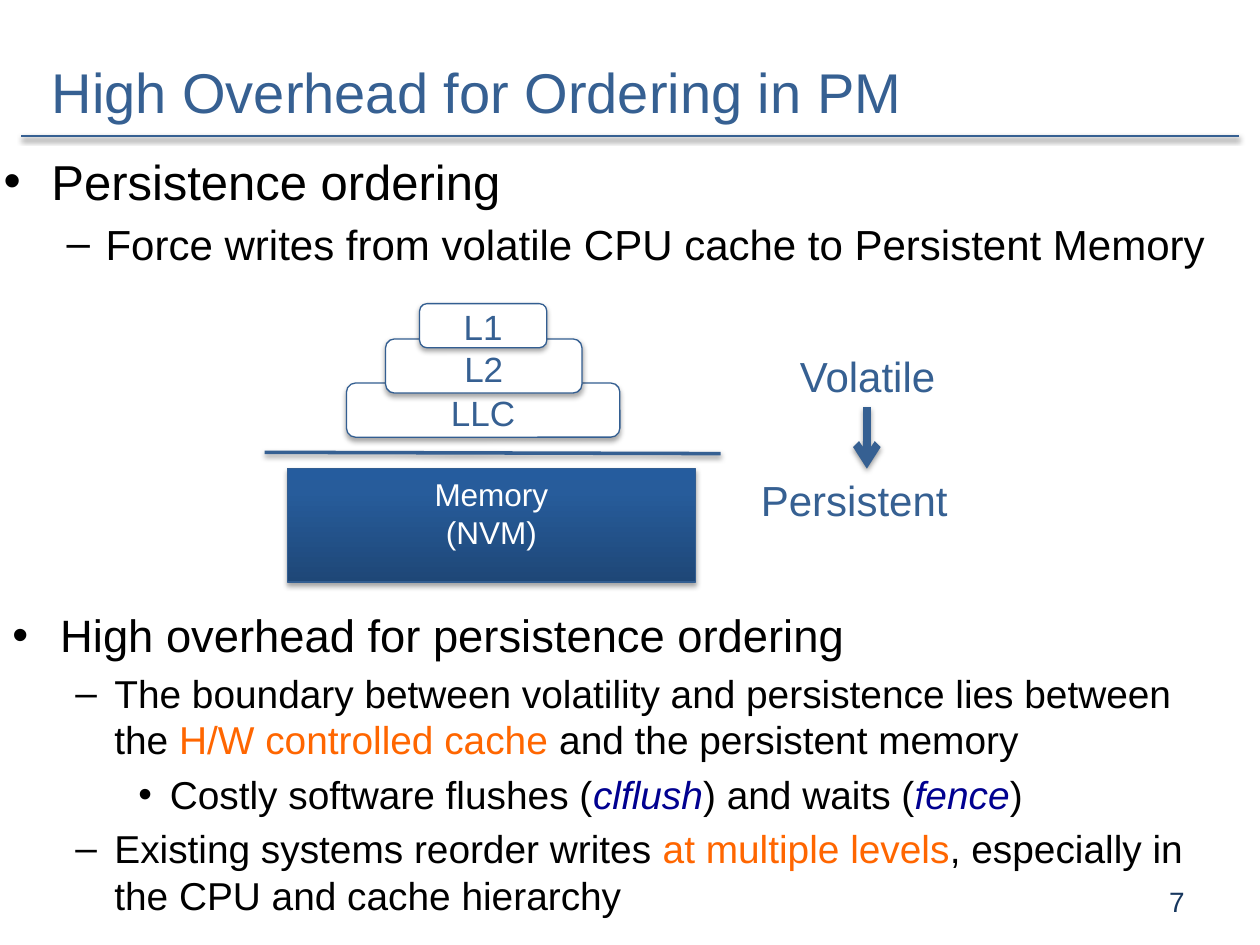
from copy import deepcopy
from dataclasses import dataclass

from lxml.etree import SubElement
from pptx import Presentation
from pptx.dml.color import RGBColor
from pptx.enum.shapes import MSO_CONNECTOR as Connector, MSO_SHAPE as Shape
from pptx.enum.text import MSO_ANCHOR as Anchor, PP_ALIGN as Align
from pptx.oxml.ns import qn
from pptx.util import Inches, Pt

COLORS = {
    "blue": "366092", "edge": "335E91", "white": "FFFFFF", "black": "000000",
    "orange": "FF6600", "navy": "000090", "number": "17375E",
}
MEMORY_STOPS = [(0, "1E4777"), (0.8, "275C9B"), (1, "255C9E")]
# Per outline level: bullet, left indent and hanging indent in inches
LEVELS = [("•", 0.38, -0.38), ("–", 0.81, -0.31), ("•", 1.25, -0.25)]


@dataclass
class Label:
    text: str
    at: tuple
    size: float
    color: str = "blue"
    align: Align = Align.CENTER
    anchor: Anchor = Anchor.TOP
    inset: float | None = None


@dataclass
class Rule:
    start: tuple
    end: tuple
    width: float
    arrow: bool = False


@dataclass
class Point:
    level: int
    size: float
    spans: list  # (text, color, italic)


def rgb(name: str) -> RGBColor:
    return RGBColor.from_string(COLORS.get(name, name))


def add_span(para, text: str, size: float, color: str, italic: bool = False) -> None:
    span = para.add_run()
    span.text = text
    for key, value in {"name": "Arial", "size": Pt(size), "italic": italic}.items():
        setattr(span.font, key, value)
    span.font.color.rgb = rgb(color)


def write(box, label: Label) -> None:
    frame = box.text_frame
    settings = {"word_wrap": True, "vertical_anchor": label.anchor}
    if label.inset is not None:
        for side in ("left", "top", "right", "bottom"):
            settings[f"margin_{side}"] = Inches(label.inset)
    for key, value in settings.items():
        setattr(frame, key, value)
    for index, line in enumerate(label.text.split("\n")):
        para = frame.add_paragraph() if index else frame.paragraphs[0]
        para.alignment = label.align
        add_span(para, line, label.size, label.color)


def add_shadow(shape, alpha: int, blur: float, distance: float) -> None:
    properties = shape._element.spPr
    effects = properties.find(qn("a:effectLst"))
    if effects is None:
        effects = SubElement(properties, qn("a:effectLst"))
    shadow = SubElement(effects, qn("a:outerShdw"), blurRad=str(Pt(blur)),
                        dist=str(Pt(distance)), dir="5400000", rotWithShape="0")
    color = SubElement(shadow, qn("a:srgbClr"), val=COLORS["black"])
    SubElement(color, qn("a:alpha"), val=str(alpha * 1000))


def add_rule(page, rule: Rule) -> None:
    line = page.shapes.add_connector(
        Connector.STRAIGHT, *map(Inches, rule.start + rule.end))
    line.line.color.rgb = rgb("blue")
    line.line.width = Pt(rule.width)
    if rule.arrow:
        SubElement(line.line._get_or_add_ln(), qn("a:tailEnd"), type="arrow")
    add_shadow(line, 38, 3.1, 1.6)


def add_block(page, kind: Shape, label: Label):
    block = page.shapes.add_shape(kind, *map(Inches, label.at))
    block.fill.solid()
    block.fill.fore_color.rgb = rgb("white")
    block.line.color.rgb = rgb("edge")
    block.line.width = Pt(0.75)
    block.shadow.inherit = False
    add_shadow(block, 35, 3.1, 1.8)
    write(block, label)
    return block


def fill_gradient(block, stops: list) -> None:
    block.fill.gradient()
    block.fill.gradient_angle = 90
    first = block.fill._fill._gradFill.gsLst[0]
    first.addnext(deepcopy(first))
    for stop, (position, color) in zip(block.fill.gradient_stops, stops):
        stop.position = position
        stop.color.rgb = rgb(color)


def add_label(page, label: Label) -> None:
    write(page.shapes.add_textbox(*map(Inches, label.at)), label)


def add_outline(page, at: tuple, points: list) -> None:
    frame = page.shapes.add_textbox(*map(Inches, at)).text_frame
    frame.word_wrap = True
    for index, point in enumerate(points):
        para = frame.add_paragraph() if index else frame.paragraphs[0]
        para.level = point.level
        bullet, left, hanging = LEVELS[point.level]
        properties = para._p.get_or_add_pPr()
        properties.set("marL", str(Inches(left)))
        properties.set("indent", str(Inches(hanging)))
        before = SubElement(properties, qn("a:spcBef"))
        SubElement(before, qn("a:spcPct"), val="20000")
        SubElement(properties, qn("a:buFont"), typeface="Arial")
        SubElement(properties, qn("a:buChar"), char=bullet)
        for text, color, italic in point.spans:
            add_span(para, text, point.size, color, italic)


def plain(text: str) -> tuple:
    return text, "black", False


def main() -> None:
    deck = Presentation()
    deck.slide_width, deck.slide_height = Inches(10), Inches(7.5)
    page = deck.slides.add_slide(deck.slide_layouts[5])

    # Title and its underline
    add_rule(page, Rule((0.17, 1.08), (9.83, 1.08), 1.5))
    heading = Label("High Overhead for Ordering in PM", (0.31, 0.35, 9.22, 0.74), 32,
                    align=Align.LEFT, anchor=Anchor.MIDDLE)
    title = page.shapes.title
    for key, value in zip(("left", "top", "width", "height"), heading.at):
        setattr(title, key, Inches(value))
    write(title, heading)

    # Outlines above and below the diagram
    add_outline(page, (-0.07, 1.15, 10.19, 1.56), [
        Point(0, 28, [plain("Persistence ordering")]),
        Point(1, 24, [plain("Force writes from volatile CPU cache to Persistent Memory")]),
    ])
    add_outline(page, (0, 4.77, 9.8, 2.6), [
        Point(0, 25.9, [plain("High overhead for persistence ordering")]),
        Point(1, 22.2, [
            plain("The boundary between volatility and persistence lies between the "),
            ("H/W controlled cache ", "orange", False),
            plain("and the persistent memory")]),
        Point(2, 22.2, [
            plain("Costly software flushes ("), ("clflush", "navy", True),
            plain(") and waits ("), ("fence", "navy", True), plain(")")]),
        Point(1, 22.2, [
            plain("Existing systems reorder writes "),
            ("at multiple levels", "orange", False),
            plain(", especially in the CPU and cache hierarchy")]),
    ])

    # Memory below the persistence boundary
    memory = add_block(page, Shape.RECTANGLE, Label(
        "Memory\n(NVM)", (2.28, 3.72, 3.24, 0.9), 18, "white"))
    fill_gradient(memory, MEMORY_STOPS)
    add_rule(page, Rule((2.1, 3.59), (5.72, 3.6), 2))

    # Cache levels, stacked from the widest up
    for cache in (
        Label("LLC", (2.75, 3.04, 2.17, 0.43), 20),
        Label("L2", (3.06, 2.69, 1.56, 0.43), 20),
        Label("L1", (3.33, 2.41, 1.01, 0.35), 20, inset=0),
    ):
        add_block(page, Shape.ROUNDED_RECTANGLE, cache)

    # Volatile to persistent, and the page number
    for label in (
        Label("Volatile", (6.06, 2.73, 1.65, 0.5), 24),
        Label("Persistent", (5.94, 3.72, 1.89, 0.5), 24, align=Align.LEFT),
        Label("7", (7.17, 6.95, 2.33, 0.4), 16, "number", Align.RIGHT, Anchor.MIDDLE),
    ):
        add_label(page, label)
    add_rule(page, Rule((6.88, 3.23), (6.88, 3.72), 4.5, arrow=True))

    deck.save("out.pptx")


if __name__ == "__main__":
    main()
